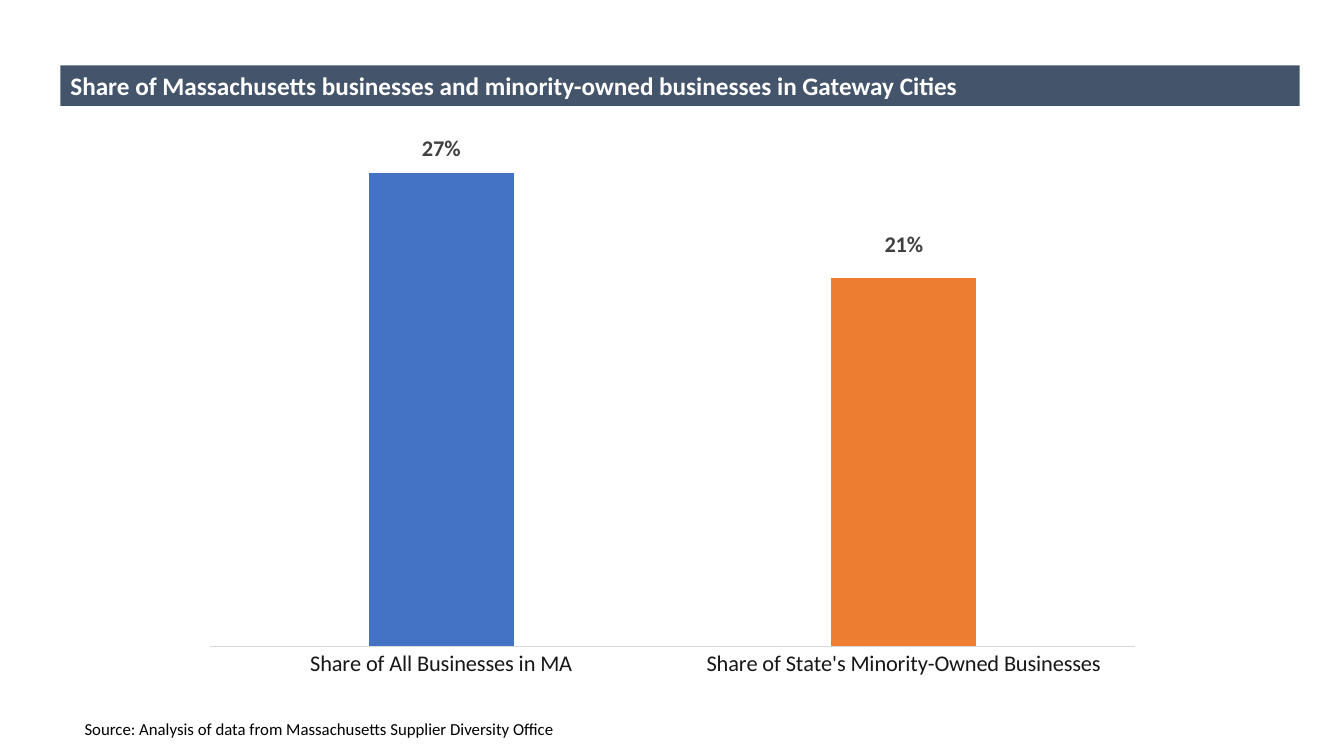
import pptx
import pptx.chart.data
import pptx.dml.color
import pptx.enum.chart
import pptx.enum.shapes
import pptx.enum.text
import pptx.oxml
import pptx.oxml.ns
import pptx.util
from pptx.util import Inches

TITLE = "Share of Massachusetts businesses and minority-owned businesses in Gateway Cities"
SOURCE = "Source: Analysis of data from Massachusetts Supplier Diversity Office"
COLORS = {"banner": "44546A", "white": "FFFFFF", "black": "000000", "category": "181717",
          "label": "404040", "axis": "D9D9D9", "all": "4472C4", "minority": "ED7D31"}
BARS = [
    {"category": "Share of All Businesses in MA", "value": 0.27, "color": "all", "label_shift": -0.42},
    {"category": "Share of State's Minority-Owned Businesses", "value": 0.21, "color": "minority",
     "label_shift": -0.35},
]
PLOT = {"x": 0.016, "y": 0.023, "w": 0.968, "h": 0.85}


def rgb(name):
    return pptx.dml.color.RGBColor.from_string(COLORS[name])


def style_font(font, size, color, bold=False):
    font.name = "Calibri"
    font.size = pptx.util.Pt(size)
    font.bold = bold
    font.color.rgb = rgb(color)


def write_text(shape, text, size=12, color="black", bold=False, wrap=True,
               anchor=pptx.enum.text.MSO_ANCHOR.TOP):
    frame = shape.text_frame
    frame.word_wrap = wrap
    frame.vertical_anchor = anchor
    paragraph = frame.paragraphs[0]
    paragraph.alignment = pptx.enum.text.PP_ALIGN.LEFT
    run = paragraph.add_run()
    run.text = text
    style_font(run.font, size, color, bold)


def manual_layout(modes, fractions):
    parts = [f'<c:{tag} val="{value}"/>' for tag, value in (modes | fractions).items()]
    return pptx.oxml.parse_xml(
        f'<c:layout {pptx.oxml.ns.nsdecls("c")}><c:manualLayout>{"".join(parts)}</c:manualLayout></c:layout>')


def add_banner(slide):
    banner = slide.shapes.add_shape(pptx.enum.shapes.MSO_SHAPE.RECTANGLE,
                                    Inches(0.6), Inches(0.65), Inches(12.29), Inches(0.4))
    banner.shadow.inherit = False
    banner.fill.solid()
    banner.fill.fore_color.rgb = rgb("banner")
    banner.line.fill.background()
    write_text(banner, TITLE, size=18, color="white", bold=True,
               anchor=pptx.enum.text.MSO_ANCHOR.MIDDLE)


def add_share_chart(slide):
    data = pptx.chart.data.CategoryChartData(number_format="0%")
    data.categories = [bar["category"] for bar in BARS]
    data.add_series("Series 1", [bar["value"] for bar in BARS])
    chart = slide.shapes.add_chart(pptx.enum.chart.XL_CHART_TYPE.COLUMN_STACKED, Inches(1.93),
                                   Inches(1.05), Inches(9.48), Inches(6.14), data).chart
    chart.has_legend = False
    chart.has_title = False
    style_font(chart.font, 10, "black")

    value_axis = chart.value_axis
    value_axis.minimum_scale, value_axis.maximum_scale = 0, 0.3
    value_axis.has_major_gridlines = False
    value_axis.visible = False
    category_axis = chart.category_axis
    category_axis.major_tick_mark = pptx.enum.chart.XL_TICK_MARK.NONE
    category_axis.format.line.color.rgb = rgb("axis")
    category_axis.format.line.width = pptx.util.Pt(0.75)
    style_font(category_axis.tick_labels.font, 16, "category")

    plot = chart.plots[0]
    plot.vary_by_categories = False
    plot.gap_width, plot.overlap = 219, 100
    series = plot.series[0]
    series.format.fill.solid()
    series.format.fill.fore_color.rgb = rgb("all")
    labels = series.data_labels
    labels.show_value = True
    labels.number_format = "0%"
    labels.number_format_is_linked = False
    style_font(labels.font, 16, "label", bold=True)
    for index, bar in enumerate(BARS):
        point = series.points[index]
        point.format.fill.solid()
        point.format.fill.fore_color.rgb = rgb(bar["color"])
        style_font(point.data_label.font, 16, "label", bold=True)

    qn = pptx.oxml.ns.qn
    for label, bar in zip(series._element.iter(qn("c:dLbl")), BARS):
        label.insert(1, manual_layout({}, {"x": 0, "y": bar["label_shift"]}))
    for leader_lines in series._element.iter(qn("c:showLeaderLines")):
        leader_lines.set("val", "0")
    plot_area = chart._chartSpace.chart.plotArea
    for layout in plot_area.findall(qn("c:layout")):
        plot_area.remove(layout)
    modes = {"layoutTarget": "inner", "xMode": "edge", "yMode": "edge"}
    plot_area.insert(0, manual_layout(modes, PLOT))


def main():
    """Build the Gateway Cities business share slide."""
    presentation = pptx.Presentation()
    presentation.slide_width, presentation.slide_height = Inches(13.33), Inches(7.5)
    slide = presentation.slides.add_slide(presentation.slide_layouts[6])
    add_banner(slide)
    add_share_chart(slide)
    source_box = slide.shapes.add_textbox(Inches(0.74), Inches(7.08), Inches(5.5), Inches(0.3))
    write_text(source_box, SOURCE)
    presentation.save("out.pptx")


if __name__ == "__main__":
    main()
